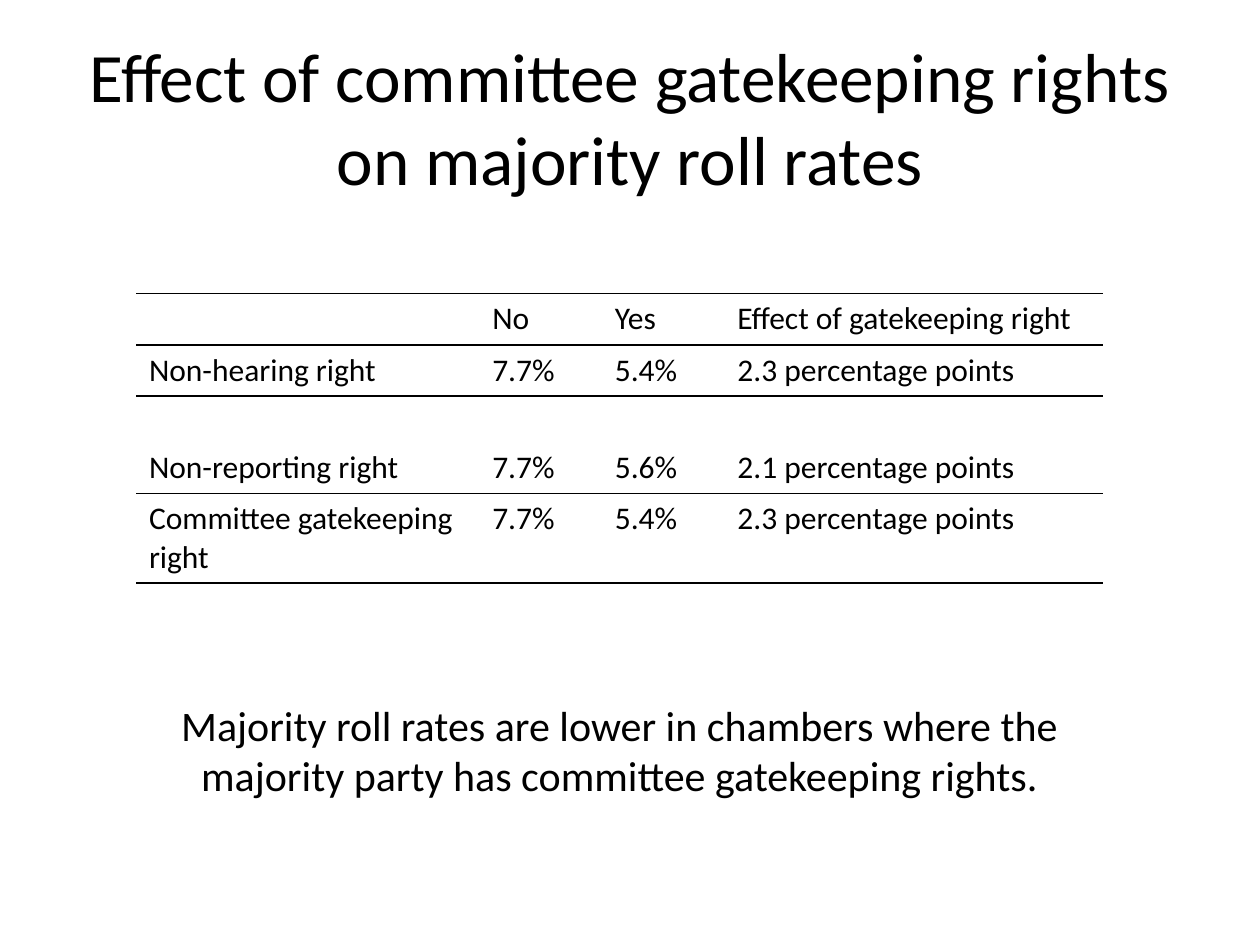
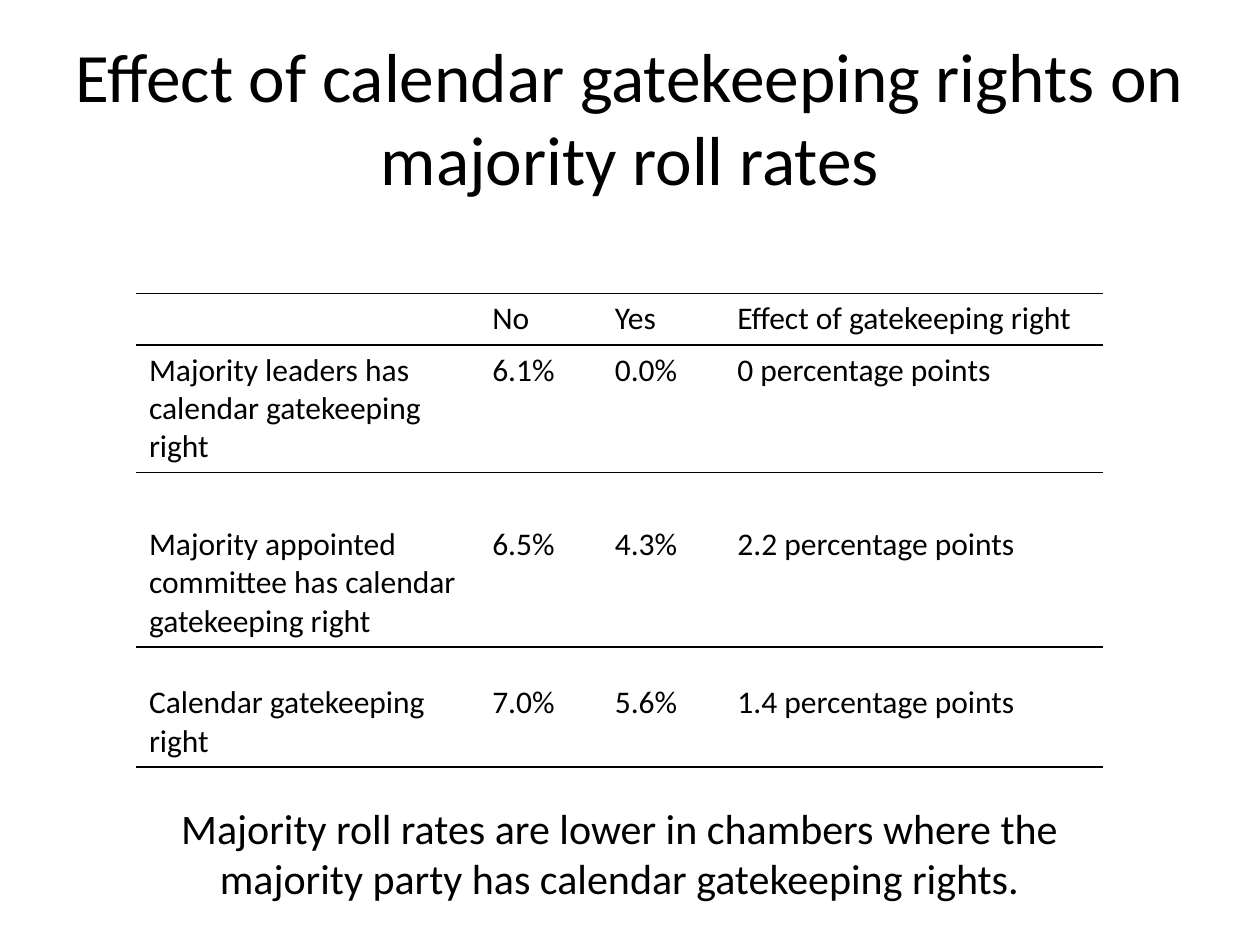
from lxml.etree import SubElement
from pptx import Presentation
from pptx.dml.color import RGBColor
from pptx.enum.text import MSO_ANCHOR, MSO_AUTO_SIZE, PP_ALIGN
from pptx.oxml.ns import qn
from pptx.util import Cm, Pt

COLORS = {"text": "000000", "rule": "000000"}
FONT = "Calibri"
PLAIN_TABLE_STYLE = "{2D5ABB26-0587-4C30-8999-92F81FD0307C}"

# Shared grid in centimetres
LEFT, WIDTH = 2.75, 19.48
COLUMN_WIDTHS = (6.92, 2.47, 2.47, 7.62)
CELL_PADDING, LINE_HEIGHT = 0.26, 0.77
FIRST_TABLE_TOP = 5.92
HEADER = ("", "No", "Yes", "Effect of gatekeeping right")


class Deck:
    """Holds the style and the slide being built."""

    def __init__(self):
        self.presentation = Presentation()
        self.presentation.slide_width = Cm(25.4)
        self.presentation.slide_height = Cm(19.05)
        self.slide = None

    def style(self, text_frame, size, alignment=PP_ALIGN.LEFT):
        for paragraph in text_frame.paragraphs:
            paragraph.alignment = alignment
            for run in paragraph.runs:
                run.font.size = Pt(size)
                run.font.name = FONT
                run.font.color.rgb = RGBColor.from_string(COLORS["text"])

    def add_slide(self, title):
        layout = self.presentation.slide_layouts.get_by_name("Title Only")
        self.slide = self.presentation.slides.add_slide(layout)
        shape = self.slide.shapes.title
        shape.left, shape.top = Cm(1.27), Cm(0.76)
        shape.width, shape.height = Cm(22.86), Cm(3.18)
        text_frame = shape.text_frame
        text_frame.text = title
        text_frame.auto_size = MSO_AUTO_SIZE.NONE
        text_frame.vertical_anchor = MSO_ANCHOR.MIDDLE
        self.style(text_frame, 39.6, PP_ALIGN.CENTER)

    def add_rule(self, cell, tag):
        line = SubElement(cell._tc.get_or_add_tcPr(), qn(tag), w=str(Pt(1)))
        fill = SubElement(line, qn("a:solidFill"))
        SubElement(fill, qn("a:srgbClr"), val=COLORS["rule"])

    def add_table(self, top, rows, top_rule=False):
        """Each row is its number of text lines followed by its cell texts."""
        heights = [CELL_PADDING + LINE_HEIGHT * lines for lines, _ in rows]
        frame = self.slide.shapes.add_table(
            len(rows), len(COLUMN_WIDTHS), Cm(LEFT), Cm(top), Cm(WIDTH), Cm(sum(heights)))
        table = frame.table
        table.first_row = table.horz_banding = False
        next(frame.element.iter(qn("a:tableStyleId"))).text = PLAIN_TABLE_STYLE
        for column, width in zip(table.columns, COLUMN_WIDTHS):
            column.width = Cm(width)
        for index, (_, texts) in enumerate(rows):
            table.rows[index].height = Cm(heights[index])
            for cell, text in zip(table.rows[index].cells, texts):
                cell.text = text
                self.style(cell.text_frame, 18)
                if top_rule and index == 0:
                    self.add_rule(cell, "a:lnT")
                self.add_rule(cell, "a:lnB")
                cell.fill.background()

    def add_conclusion(self, top, text):
        shape = self.slide.shapes.add_textbox(Cm(LEFT), Cm(top), Cm(WIDTH), Cm(2.31))
        text_frame = shape.text_frame
        text_frame.word_wrap = True
        text_frame.text = text
        self.style(text_frame, 24, PP_ALIGN.CENTER)


def add_effect_slide(deck, kind, sections, conclusion_top):
    deck.add_slide(f"Effect of {kind} gatekeeping rights on majority roll rates")
    # The first table carries the column heads
    for index, (top, lines, *texts) in enumerate(sections):
        rows = [(lines, texts)]
        if index == 0:
            rows.insert(0, (1, HEADER))
        deck.add_table(top, rows, top_rule=index == 0)
    deck.add_conclusion(
        conclusion_top,
        "Majority roll rates are lower in chambers where the majority party "
        f"has {kind} gatekeeping rights.")


def main():
    deck = Deck()

    # Committee rights
    add_effect_slide(deck, "committee", [
        (FIRST_TABLE_TOP, 1, "Non-hearing right", "7.7%", "5.4%", "2.3 percentage points"),
        (8.92, 1, "Non-reporting right", "7.7%", "5.6%", "2.1 percentage points"),
        (9.95, 2, "Committee gatekeeping right", "7.7%", "5.4%", "2.3 percentage points"),
    ], conclusion_top=13.97)

    # Calendar rights
    add_effect_slide(deck, "calendar", [
        (FIRST_TABLE_TOP, 3, "Majority leaders has calendar gatekeeping right",
         "6.1%", "0.0%", "0 percentage points"),
        (10.46, 3, "Majority appointed committee has calendar gatekeeping right",
         "6.5%", "4.3%", "2.2 percentage points"),
        (13.66, 2, "Calendar gatekeeping right", "7.0%", "5.6%", "1.4 percentage points"),
    ], conclusion_top=16.05)

    deck.presentation.save("out.pptx")


if __name__ == "__main__":
    main()
